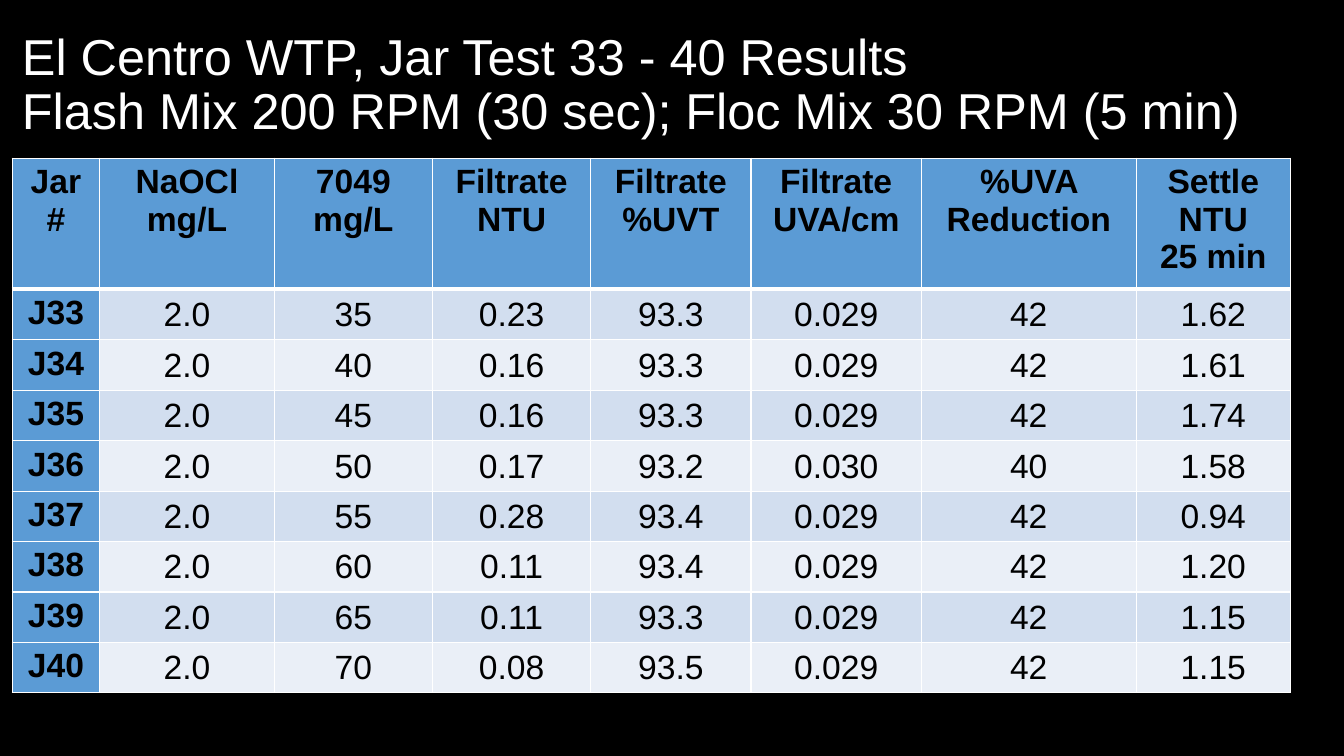
import pptx
import pptx.util
import pptx.dml.color
import pptx.enum.text
import pptx.oxml
import pptx.oxml.ns

Inches, Pt = pptx.util.Inches, pptx.util.Pt
RGBColor = pptx.dml.color.RGBColor
PP_ALIGN = pptx.enum.text.PP_ALIGN
MSO_ANCHOR = pptx.enum.text.MSO_ANCHOR

BLACK = RGBColor(0x00, 0x00, 0x00)
WHITE = RGBColor(0xFF, 0xFF, 0xFF)
HEADER_BLUE = RGBColor(0x5B, 0x9B, 0xD5)
BANDS = [RGBColor(0xD2, 0xDE, 0xEF), RGBColor(0xEA, 0xEF, 0xF7)]

TITLE = ["El Centro WTP, Jar Test 33 - 40 Results",
         "Flash Mix 200 RPM (30 sec); Floc Mix 30 RPM (5 min)"]
ROWS = [
    ["Jar#", "NaOCl\nmg/L", "7049\nmg/L", "Filtrate\nNTU", "Filtrate\n%UVT",
     "Filtrate\nUVA/cm", "%UVA Reduction", "Settle\nNTU\n25 min"],
    ["J33", "2.0", "35", "0.23", "93.3", "0.029", "42", "1.62"],
    ["J34", "2.0", "40", "0.16", "93.3", "0.029", "42", "1.61"],
    ["J35", "2.0", "45", "0.16", "93.3", "0.029", "42", "1.74"],
    ["J36", "2.0", "50", "0.17", "93.2", "0.030", "40", "1.58"],
    ["J37", "2.0", "55", "0.28", "93.4", "0.029", "42", "0.94"],
    ["J38", "2.0", "60", "0.11", "93.4", "0.029", "42", "1.20"],
    ["J39", "2.0", "65", "0.11", "93.3", "0.029", "42", "1.15"],
    ["J40", "2.0", "70", "0.08", "93.5", "0.029", "42", "1.15"],
]
COL_WIDTHS = [0.87, 1.73, 1.57, 1.57, 1.59, 1.69, 2.13, 1.53]
HEADER_HEIGHT, ROW_HEIGHT = 1.22, 0.47


def add_run(p, text, size, color, bold=False):
    r = p.add_run()
    r.text = text
    r.font.name = "Arial"
    r.font.size = Pt(size)
    r.font.bold = bold
    r.font.color.rgb = color


def set_border(cell, side, width):
    cell._tc.get_or_add_tcPr().append(pptx.oxml.parse_xml(
        f'<a:ln{side} {pptx.oxml.ns.nsdecls("a")} w="{Pt(width)}">'
        f'<a:solidFill><a:srgbClr val="{WHITE}"/></a:solidFill></a:ln{side}>'))


# Slide with a black background
prs = pptx.Presentation()
prs.slide_width, prs.slide_height = Inches(13.33), Inches(7.5)
s = prs.slides.add_slide(prs.slide_layouts[6])
s.background.fill.solid()
s.background.fill.fore_color.rgb = BLACK

# Title
sp = s.shapes.add_textbox(Inches(0.12), Inches(0.13), Inches(13.03), Inches(1.45))
tf = sp.text_frame
tf.word_wrap = True
tf.vertical_anchor = MSO_ANCHOR.MIDDLE
p = tf.paragraphs[0]
p.line_spacing = 0.9
add_run(p, TITLE[0], 36, WHITE)
p.add_line_break()
add_run(p, TITLE[1], 36, WHITE)

# Results table
table = s.shapes.add_table(
    len(ROWS), len(COL_WIDTHS), Inches(0.12), Inches(1.57), Inches(sum(COL_WIDTHS)),
    Inches(HEADER_HEIGHT + ROW_HEIGHT * (len(ROWS) - 1))).table
table.first_col = True
for column, width in zip(table.columns, COL_WIDTHS):
    column.width = Inches(width)

for i, values in enumerate(ROWS):
    table.rows[i].height = Inches(ROW_HEIGHT if i else HEADER_HEIGHT)
    for j, text in enumerate(values):
        cell = table.cell(i, j)
        is_heading = i == 0 or j == 0

        # Thick rule below the header row, thin rules elsewhere
        for side, width in [("L", 1), ("R", 1), ("T", 3 if i == 1 else 1),
                            ("B", 3 if i == 0 else 1)]:
            set_border(cell, side, width)
        cell.fill.solid()
        cell.fill.fore_color.rgb = HEADER_BLUE if is_heading else BANDS[(i - 1) % 2]

        if not is_heading:
            cell.vertical_anchor = MSO_ANCHOR.MIDDLE
            cell.margin_left = cell.margin_right = cell.margin_top = Inches(0.01)
            cell.margin_bottom = 0

        tf = cell.text_frame
        for n, line in enumerate(text.split("\n")):
            p = tf.add_paragraph() if n else tf.paragraphs[0]
            p.alignment = PP_ALIGN.CENTER
            add_run(p, line, 24, BLACK, is_heading)

prs.save("out.pptx")
